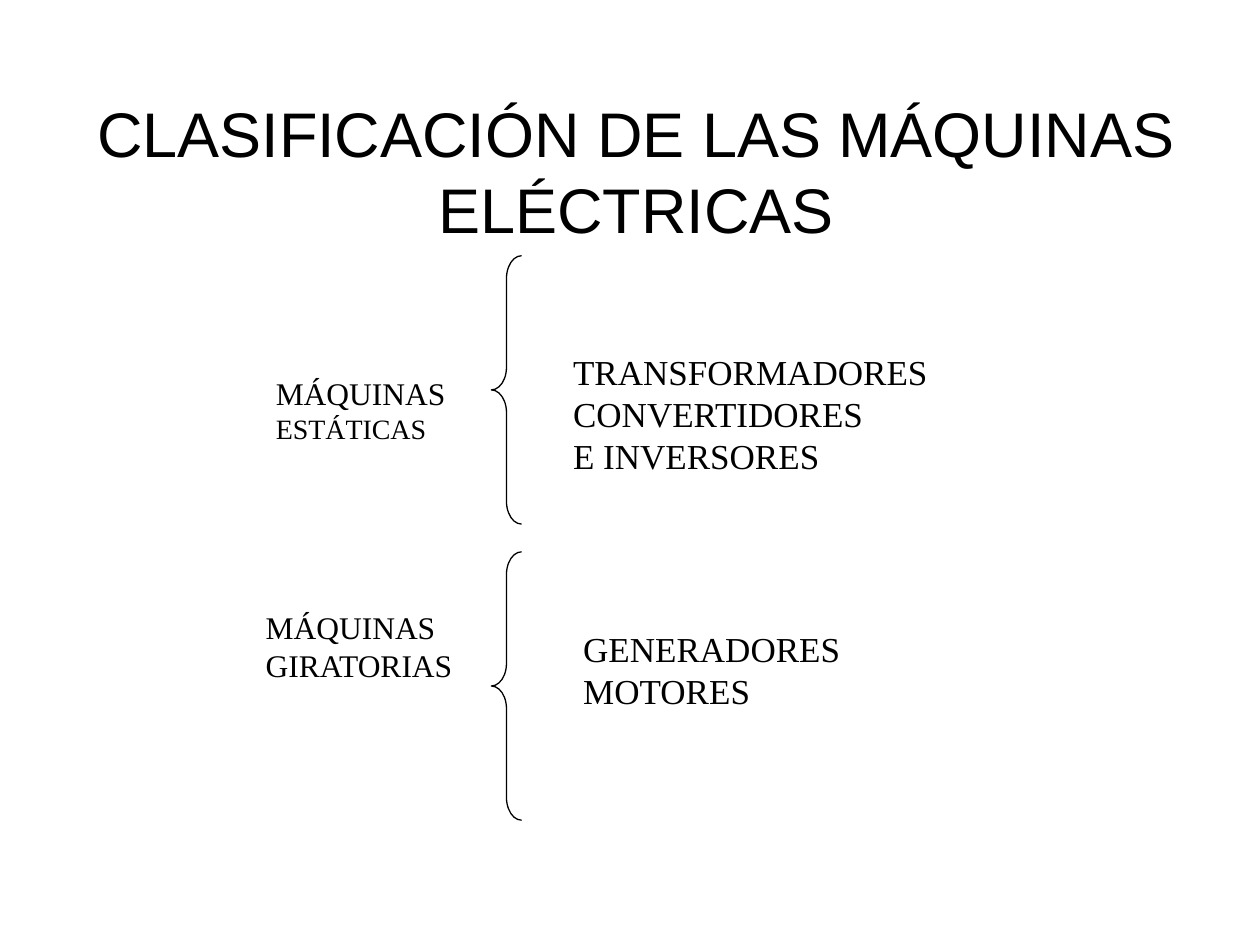
import pptx
import pptx.dml.color
import pptx.enum.shapes
import pptx.enum.text
import pptx.util

BLACK = pptx.dml.color.RGBColor(0x00, 0x00, 0x00)
COLUMNS, ROWS = 100, 75
LINE_HEIGHT = 1.2


class Diagram:
    """Draws styled elements on one slide, placed in grid columns and rows."""

    def __init__(self, deck):
        self.column = deck.slide_width / COLUMNS
        self.row = deck.slide_height / ROWS
        self.slide = deck.slides.add_slide(deck.slide_layouts[6])

    def place(self, left, top, width, height):
        return (round(left * self.column), round(top * self.row),
                round(width * self.column), round(height * self.row))

    def text(self, area, lines, sizes, font="Times New Roman", wrap=True,
             align=pptx.enum.text.PP_ALIGN.LEFT):
        frame = self.slide.shapes.add_textbox(*self.place(*area)).text_frame
        frame.word_wrap = wrap
        frame.text = "\n".join(lines)
        for paragraph, size in zip(frame.paragraphs, sizes):
            paragraph.alignment = align
            paragraph.line_spacing = pptx.util.Pt(size * LINE_HEIGHT)
            for run in paragraph.runs:
                run.font.name = font
                run.font.size = pptx.util.Pt(size)
                run.font.color.rgb = BLACK

    def brace(self, area):
        brace = self.slide.shapes.add_shape(
            pptx.enum.shapes.MSO_SHAPE.LEFT_BRACE, *self.place(*area))
        brace.adjustments[0] = 0.75
        brace.adjustments[1] = 0.5
        brace.shadow.inherit = False
        brace.fill.background()
        brace.line.color.rgb = BLACK
        brace.line.width = pptx.util.Pt(0.75)


def main():
    deck = pptx.Presentation()
    deck.slide_width = pptx.util.Inches(10)
    deck.slide_height = pptx.util.Inches(7.5)
    diagram = Diagram(deck)

    diagram.text((5.5, 7, 90, 12.5), ["CLASIFICACIÓN DE LAS MÁQUINAS ELÉCTRICAS"],
                 [36], font="Arial", align=pptx.enum.text.PP_ALIGN.CENTER)

    diagram.text((20.9, 29.2, 15.5, 6.2), ["MÁQUINAS", "ESTÁTICAS"], [18, 16], wrap=False)
    diagram.text((44.5, 27.3, 35.4, 11),
                 ["TRANSFORMADORES", "CONVERTIDORES", "E INVERSORES"], [20] * 3)

    diagram.text((20.1, 47.8, 17.2, 7), ["MÁQUINAS", "GIRATORIAS"], [18] * 2, wrap=False)
    diagram.text((45.3, 49.3, 25.2, 7.7), ["GENERADORES", "MOTORES"], [20] * 2)

    for brace_top in (20.3, 43.8):
        diagram.brace((39, brace_top, 2.4, 21.3))

    deck.save("out.pptx")


if __name__ == "__main__":
    main()
